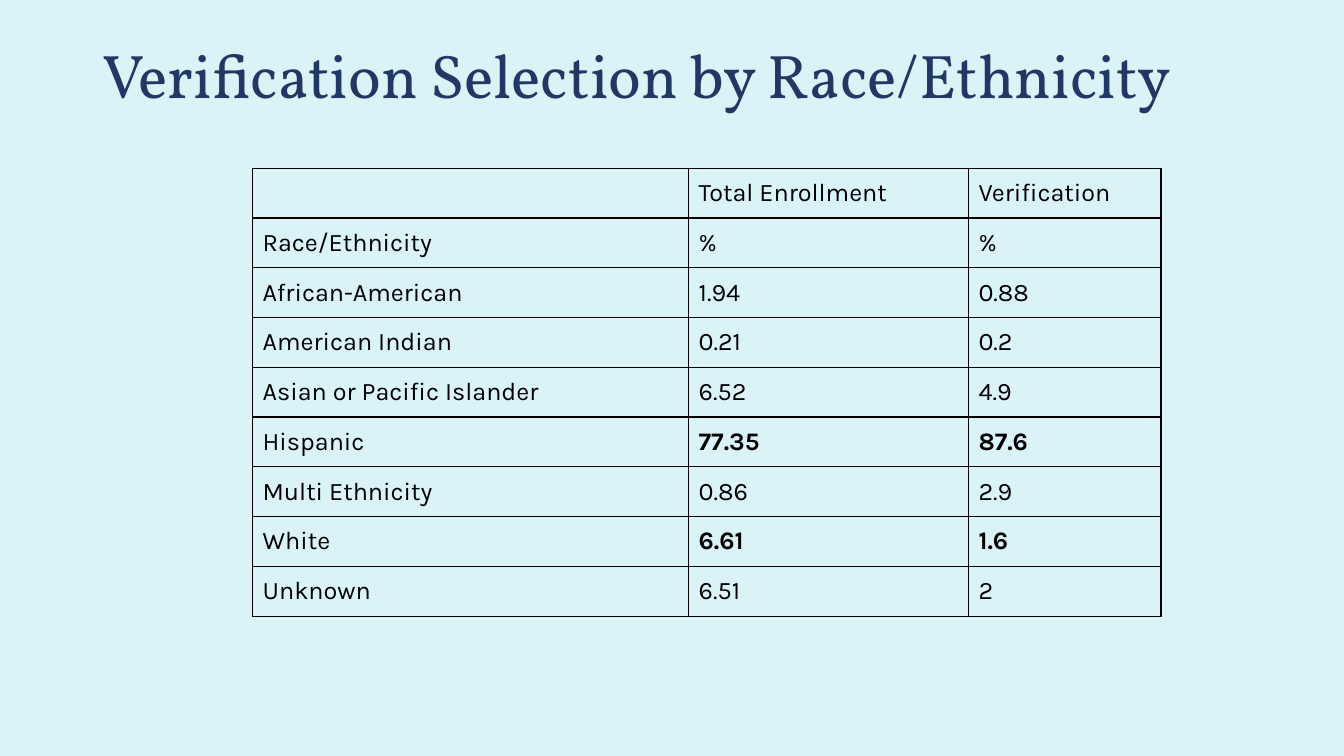
from dataclasses import dataclass

from lxml.etree import SubElement
from pptx import Presentation
from pptx.dml.color import RGBColor
from pptx.enum.text import MSO_ANCHOR
from pptx.oxml.ns import qn
from pptx.util import Pt


@dataclass(frozen=True)
class Theme:
    back: str = "DAF3F6"
    navy: str = "203864"
    ink: str = "000000"
    head: str = "Vollkorn"
    body: str = "Karla"
    big: int = 44
    small: int = 18
    rule: int = 1


THEME = Theme()
TITLE = "Verification Selection by Race/Ethnicity"
ROWS = [
    ("", "Total Enrollment", "Verification"),
    ("Race/Ethnicity", "%", "%"),
    ("African-American", "1.94", "0.88"),
    ("American Indian", "0.21", "0.2"),
    ("Asian or Pacific Islander", "6.52", "4.9"),
    ("Hispanic", "77.35", "87.6"),
    ("Multi Ethnicity", "0.86", "2.9"),
    ("White", "6.61", "1.6"),
    ("Unknown", "6.51", "2"),
]
STRONG = {"Hispanic", "White"}
SHARES = (0.48, 0.308, 0.212)


def style(para, face, size, color):
    para.font.name = face
    para.font.size = Pt(size)
    para.font.color.rgb = RGBColor.from_string(color)


def add_title(slide, left, top, width, height):
    frame = slide.shapes.add_textbox(
        Pt(left), Pt(top), Pt(width), Pt(height)).text_frame
    frame.word_wrap = True
    frame.vertical_anchor = MSO_ANCHOR.TOP
    para = frame.paragraphs[0]
    para.text = TITLE
    para.line_spacing = 0.9
    style(para, THEME.head, THEME.big, THEME.navy)


def add_rules(cell):
    """Draw a solid line on all four sides of a cell."""
    props = cell._tc.get_or_add_tcPr()
    for spot, side in enumerate(("lnL", "lnR", "lnT", "lnB")):
        line = SubElement(props, qn(f"a:{side}"), w=str(Pt(THEME.rule)))
        fill = SubElement(line, qn("a:solidFill"))
        SubElement(fill, qn("a:srgbClr"), val=THEME.ink)
        props.insert(spot, line)


def fill_cell(cell, text, bold):
    cell.margin_left = cell.margin_right = Pt(7.2)
    cell.margin_top = cell.margin_bottom = Pt(7.2)
    cell.fill.background()
    add_rules(cell)
    para = cell.text_frame.paragraphs[0]
    para.text = text
    style(para, THEME.body, THEME.small, THEME.ink)
    para.font.bold = bold


def add_grid(slide, left, top, width, height):
    table = slide.shapes.add_table(
        len(ROWS), len(SHARES), Pt(left), Pt(top), Pt(width), Pt(height)).table
    table.first_row = table.horz_banding = False
    for col, share in zip(table.columns, SHARES):
        col.width = Pt(width * share)
    for row, texts in zip(table.rows, ROWS):
        row.height = Pt(height / len(ROWS))
        for place, (cell, text) in enumerate(zip(row.cells, texts)):
            fill_cell(cell, text, place > 0 and texts[0] in STRONG)


def main():
    deck = Presentation()
    deck.slide_width, deck.slide_height = Pt(960), Pt(540)
    slide = deck.slides.add_slide(deck.slide_layouts[6])
    fill = slide.background.fill
    fill.solid()
    fill.fore_color.rgb = RGBColor.from_string(THEME.back)
    add_grid(slide, 180.4, 120.2, 649, 319.5)
    add_title(slide, 66, 28.8, 828, 104.4)
    deck.save("out.pptx")


if __name__ == "__main__":
    main()
